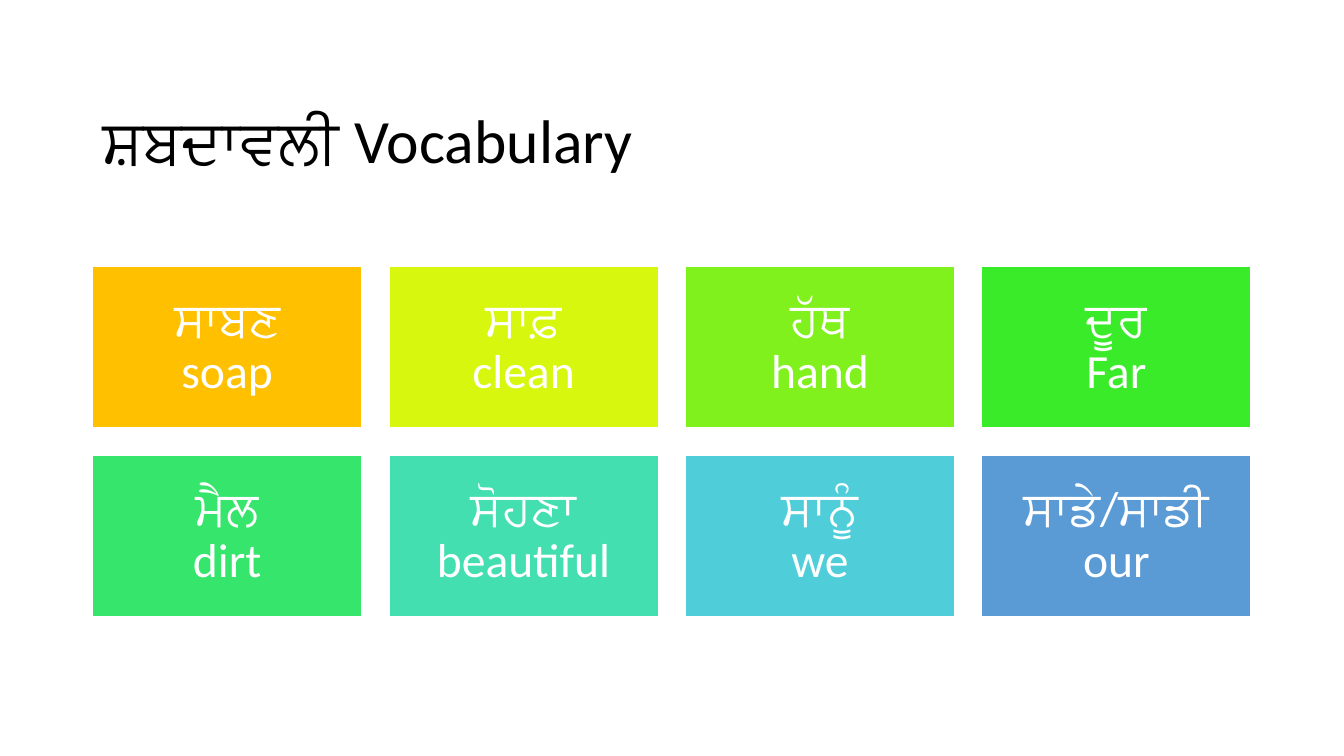
"""Build the Punjabi and English vocabulary slide."""
from dataclasses import dataclass

from pptx import Presentation
from pptx.dml.color import RGBColor
from pptx.enum.shapes import MSO_SHAPE
from pptx.enum.text import MSO_ANCHOR, PP_ALIGN
from pptx.slide import Slide
from pptx.text.text import _Paragraph
from pptx.util import Cm, Pt

RECTANGLE = MSO_SHAPE.RECTANGLE
MIDDLE, BOTTOM = MSO_ANCHOR.MIDDLE, MSO_ANCHOR.BOTTOM
LEFT, CENTER = PP_ALIGN.LEFT, PP_ALIGN.CENTER


@dataclass(frozen=True)
class Theme:
    font: str = "Calibri"
    title_size: int = 44
    card_size: int = 34
    dark: str = "000000"
    light: str = "FFFFFF"
    line_spacing: float = 0.9


@dataclass(frozen=True)
class Grid:
    left: float = 2.33
    top: float = 6.71
    width: float = 6.79
    height: float = 4.07
    column_step: float = 7.47
    row_step: float = 4.76
    columns: int = 4
    inset: float = 0.36


@dataclass(frozen=True)
class Word:
    punjabi: str
    english: str
    fill: str


THEME = Theme()
GRID = Grid()
WORDS = [
    Word("ਸਾਬਣ", "soap", "FFC000"),
    Word("ਸਾਫ਼", "clean", "D7F80E"),
    Word("ਹੱਥ", "hand", "80F11C"),
    Word("ਦੂਰ", "Far", "39EB29"),
    Word("ਮੈਲ", "dirt", "36E56C"),
    Word("ਸੋਹਣਾ", "beautiful", "43DFB0"),
    Word("ਸਾਨੂੰ", "we", "4FCEDA"),
    Word("ਸਾਡੇ/ਸਾਡੀ", "our", "5B9BD5"),
]


def write(paragraph: _Paragraph, text: str, size: int, color: str, alignment: PP_ALIGN) -> None:
    """Fill a paragraph with text in the theme font."""
    paragraph.text = text
    paragraph.alignment = alignment
    paragraph.line_spacing = THEME.line_spacing
    paragraph.font.name = THEME.font
    paragraph.font.size = Pt(size)
    paragraph.font.color.rgb = RGBColor.from_string(color)


def add_title(slide: Slide, text: str) -> None:
    """Place the heading above the grid."""
    shape = slide.shapes.add_textbox(Cm(GRID.left), Cm(1.01), Cm(29.21), Cm(3.68))
    frame = shape.text_frame
    frame.word_wrap = True
    frame.vertical_anchor = BOTTOM
    frame.margin_bottom = Cm(0.23)
    write(frame.paragraphs[0], text, THEME.title_size, THEME.dark, LEFT)


def add_card(slide: Slide, index: int, word: Word) -> None:
    """Draw one vocabulary card in its grid cell."""
    row, column = divmod(index, GRID.columns)
    shape = slide.shapes.add_shape(
        RECTANGLE,
        Cm(GRID.left + column * GRID.column_step),
        Cm(GRID.top + row * GRID.row_step),
        Cm(GRID.width),
        Cm(GRID.height),
    )
    shape.shadow.inherit = False
    shape.fill.solid()
    shape.fill.fore_color.rgb = RGBColor.from_string(word.fill)
    shape.line.color.rgb = RGBColor.from_string(THEME.light)
    shape.line.width = Pt(1)
    frame = shape.text_frame
    frame.word_wrap = True
    frame.vertical_anchor = MIDDLE
    frame.margin_left = frame.margin_right = Cm(GRID.inset)
    frame.margin_top = frame.margin_bottom = Cm(GRID.inset)
    text = f"{word.punjabi}\v{word.english}"
    write(frame.paragraphs[0], text, THEME.card_size, THEME.light, CENTER)


def main() -> None:
    """Create and save the presentation."""
    presentation = Presentation()
    presentation.slide_width = Cm(33.87)
    presentation.slide_height = Cm(19.05)
    slide = presentation.slides.add_slide(presentation.slide_layouts[6])
    add_title(slide, "ਸ਼ਬਦਾਵਲੀ Vocabulary")
    for index, word in enumerate(WORDS):
        add_card(slide, index, word)
    presentation.save("out.pptx")


if __name__ == "__main__":
    main()
